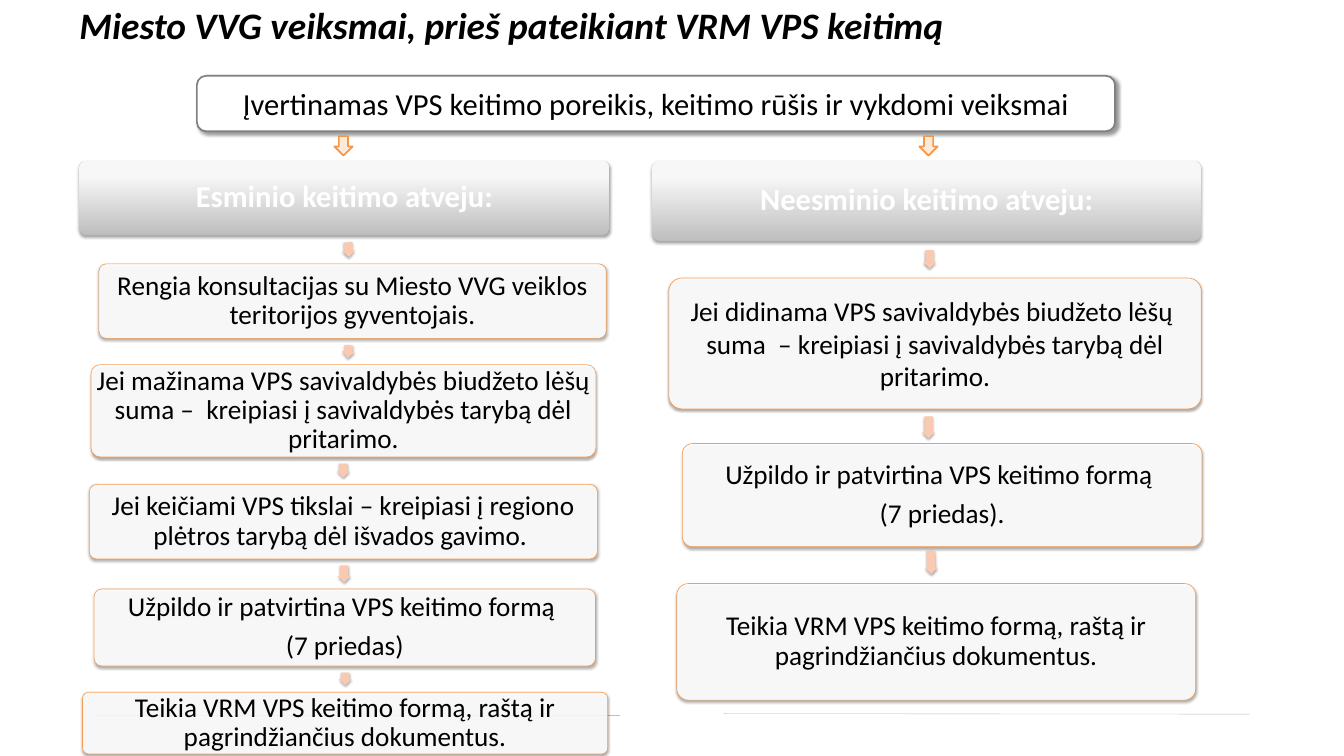
"""Builds a slide with the steps a city group takes before changing its VPS."""
from pptx import Presentation, util as u
from pptx.dml.color import RGBColor
from pptx.enum import shapes, text
from pptx.oxml import ns, parse_xml

HUES = {"ink": "000000", "white": "FFFFFF", "rule": "BEBEBE", "pale": "F7F7F7",
        "edge": "F79646", "cream": "FDEADA", "peach": "FAC9B1", "frame": "808080"}
RGB = {name: RGBColor.from_string(hue) for name, hue in HUES.items()}
KIND = shapes.MSO_SHAPE

deck = Presentation()
deck.slide_width, deck.slide_height = u.Cm(55.84), u.Cm(31.43)
slide = deck.slides.add_slide(deck.slide_layouts[6])


def draw(kind, place, fill, line=None, width=0.75, alpha=None, shade=None):
    """Draws a shape; shade holds alpha, blur, distance and angle of its shadow."""
    shape = slide.shapes.add_shape(kind, *map(u.Cm, place))
    if fill == "fade":
        shape.fill.gradient()
        shape.fill.gradient_angle = 90
        for stop, hue, spot in zip(shape.fill.gradient_stops, ("rule", "pale"), (0, 0.8)):
            stop.color.rgb = RGB[hue]
            stop.position = spot
    else:
        shape.fill.solid()
        shape.fill.fore_color.rgb = RGB[fill]
    if line:
        shape.line.color.rgb = RGB[line]
        shape.line.width = u.Pt(width)
    else:
        shape.line.fill.background()
    props = shape.element.spPr
    if alpha:
        for hue in list(props.iter(ns.qn("a:srgbClr"))):
            hue.append(parse_xml(f'<a:alpha {ns.nsdecls("a")} val="{alpha * 1000}"/>'))
    shape.shadow.inherit = False
    if shade:
        dark, blur, gap, turn = shade
        props.find(ns.qn("a:effectLst")).append(parse_xml(
            f'<a:outerShdw {ns.nsdecls("a")} blurRad="{u.Pt(blur)}" dist="{u.Pt(gap)}" '
            f'dir="{turn * 60000}" rotWithShape="0"><a:srgbClr val="{HUES["ink"]}">'
            f'<a:alpha val="{dark * 1000}"/></a:srgbClr></a:outerShdw>'))
    return shape


def write(shape, words, size, hue="ink", bold=False, slant=False, pad=0.1, space=None,
          align=text.PP_ALIGN.CENTER, anchor=text.MSO_ANCHOR.MIDDLE):
    """Fills a shape with one paragraph per line of words."""
    frame = shape.text_frame
    frame.word_wrap = True
    frame.vertical_anchor = anchor
    frame.margin_left = frame.margin_right = u.Cm(pad)
    frame.margin_top = frame.margin_bottom = u.Cm(pad)
    frame.text = words
    for para in frame.paragraphs:
        para.alignment = align
        para.line_spacing = space
        para.font.name, para.font.size = "Calibri", u.Pt(size)
        para.font.bold, para.font.italic = bold, slant
        para.font.color.rgb = RGB[hue]
    if space:
        for para in frame.paragraphs[:-1]:
            para.space_after = u.Pt(11)


for ends in ((3.91, 29.72, 25.76, 29.72), (30.07, 29.67, 51.92, 29.69)):
    rule = slide.shapes.add_connector(shapes.MSO_CONNECTOR.STRAIGHT, *map(u.Cm, ends))
    rule.line.color.rgb = RGB["rule"]
    rule.line.width = u.Pt(0.4)
    rule.element.spPr.append(parse_xml(f'<a:effectLst {ns.nsdecls("a")}/>'))

title = slide.shapes.add_textbox(*map(u.Cm, (3.3, 0.1, 49.58, 2.31)))
write(title, "Miesto VVG veiksmai, prieš pateikiant VRM VPS keitimą", 44, bold=True,
      slant=True, pad=0, align=text.PP_ALIGN.LEFT, anchor=text.MSO_ANCHOR.TOP)

SOFT = (35, 3.1, 1.8, 90)
FORM = "Užpildo ir patvirtina VPS keitimo formą \n(7 priedas)"
SEND = "Teikia VRM VPS keitimo formą, raštą ir pagrindžiančius dokumentus."

heads = [
    ((3.3, 6.68, 22.02, 3.1), "Esminio keitimo atveju:"),
    ((27.1, 6.68, 22.81, 3.35), "Neesminio keitimo atveju:"),
]
for place, words in heads:
    head = draw(KIND.ROUNDED_RECTANGLE, place, "fade", shade=SOFT)
    head.adjustments[0] = 0.1
    write(head, words, 36, "white", bold=True, space=0.9)

steps = [
    ((4.11, 10.97, 21.08, 3.1), 0.9,
     "Rengia konsultacijas su Miesto VVG veiklos teritorijos gyventojais."),
    ((3.78, 15.16, 20.98, 3.84), 0.9,
     "Jei mažinama VPS savivaldybės biudžeto lėšų suma –  kreipiasi į "
     "savivaldybės tarybą dėl pritarimo."),
    ((3.71, 20.14, 21.11, 3.1), 0.9,
     "Jei keičiami VPS tikslai – kreipiasi į regiono plėtros tarybą dėl išvados gavimo. "),
    ((3.91, 24.49, 20.83, 3.2), 0.9, FORM),
    ((3.43, 28.78, 21.82, 2.57), 0.9, SEND),
    ((27.79, 11.56, 22.12, 5.44), None,
     "Jei didinama VPS savivaldybės biudžeto lėšų \n"
     "suma  – kreipiasi į savivaldybės tarybą dėl pritarimo."),
    ((28.35, 18.44, 21.59, 4.29), 0.9, FORM + "."),
    ((28.12, 24.26, 21.56, 4.85), 0.9, SEND),
]
for place, space, words in steps:
    step = draw(KIND.ROUNDED_RECTANGLE, place, "white", "edge", alpha=90, shade=SOFT)
    step.adjustments[0] = 0.1
    write(step, words, 32, space=space)

THICK = 0.53
arrows = [
    (14.48, 10.38, 0.61, 85.6), (14.47, 14.62, 0.53, 94.7), (14.26, 19.57, 0.58, 90),
    (14.3, 23.86, 0.71, 89.1), (14.34, 28.23, 0.53, 90),
    (38.63, 10.78, 0.76, 89.6), (38.58, 17.77, 0.91, 90), (38.68, 23.38, 0.97, 88.1),
]
for mid, row, long, turn in arrows:
    place = (mid - long / 2, row - THICK / 2, long, THICK)
    arrow = draw(KIND.RIGHT_ARROW, place, "peach", shade=SOFT)
    arrow.adjustments[0], arrow.adjustments[1] = 0.67, 0.5
    arrow.rotation = turn

need = draw(KIND.ROUNDED_RECTANGLE, (8.18, 3.15, 38.15, 2.31), "white", "frame", 2,
            shade=(40, 4, 3, 45))
write(need, "Įvertinamas VPS keitimo poreikis, keitimo rūšis ir vykdomi veiksmai", 36)
for left in (13.89, 38.2):
    draw(KIND.DOWN_ARROW, (left, 5.66, 0.76, 0.81), "cream", "edge", 2)

deck.save("out.pptx")
